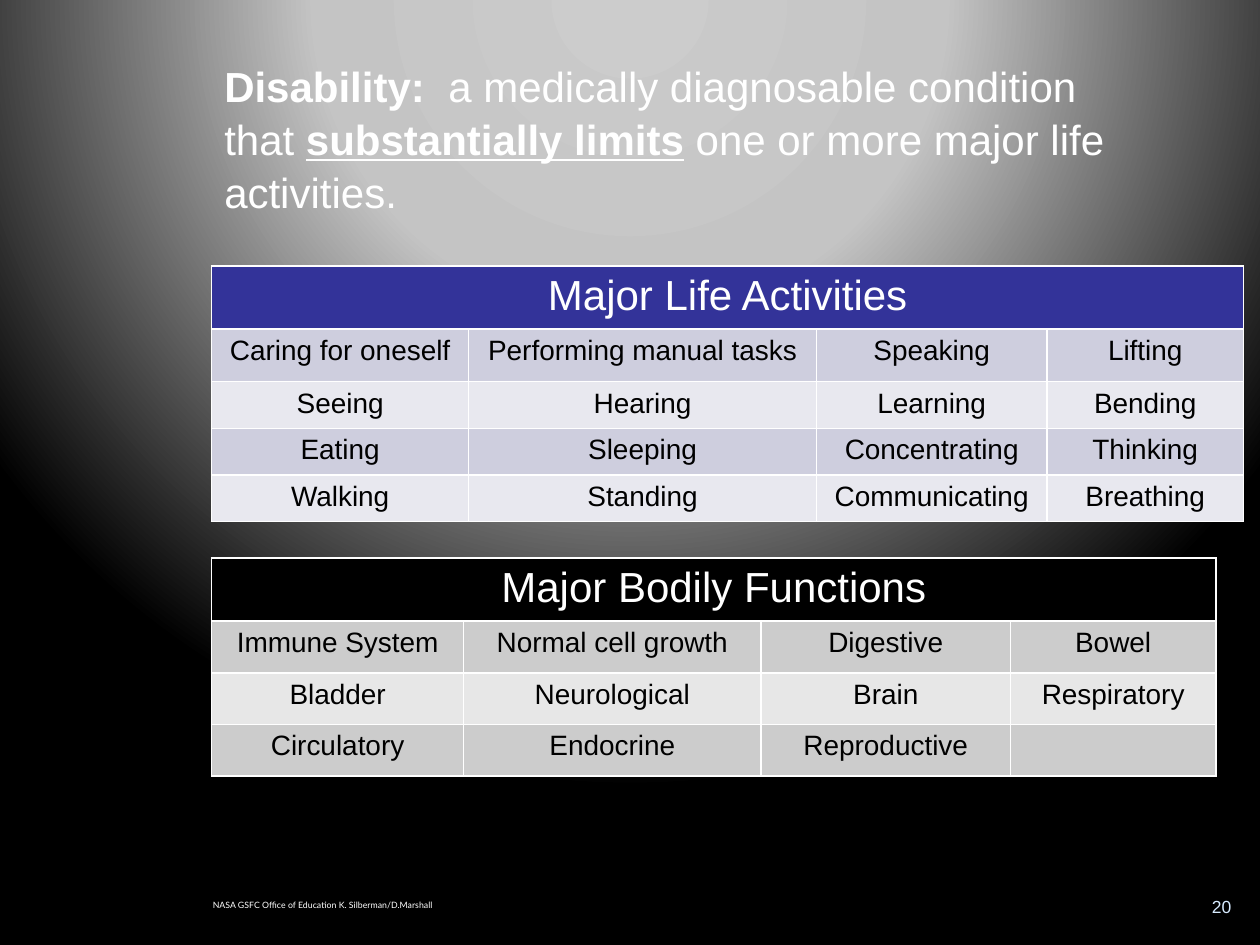
from lxml import etree
from pptx import Presentation
from pptx.dml.color import RGBColor
from pptx.enum.text import MSO_ANCHOR, MSO_AUTO_SIZE, PP_ALIGN
from pptx.oxml import parse_xml
from pptx.oxml.ns import nsdecls, qn
from pptx.util import Inches, Pt

DEFINITION = [
    ("Disability: ", {"bold": True}),
    (" a medically diagnosable condition that ", {}),
    ("substantially limits", {"bold": True, "underline": True}),
    (" one or more major life activities.", {}),
]
TABLES = [
    {
        "heading": "Major Life Activities",
        "top": 2.11,
        "columns": [2.04, 2.76, 1.83, 1.56],
        "heights": [0.5, 0.42, 0.37, 0.37, 0.37],
        "heading_fill": "333399",
        "bands": ["CECEDE", "E8E8EF"],
        "rows": [
            ["Caring for oneself", "Performing manual tasks", "Speaking", "Lifting"],
            ["Seeing", "Hearing", "Learning", "Bending"],
            ["Eating", "Sleeping", "Concentrating", "Thinking"],
            ["Walking", "Standing", "Communicating", "Breathing"],
        ],
    },
    {
        "heading": "Major Bodily Functions",
        "top": 4.43,
        "columns": [2, 2.36, 1.98, 1.63],
        "heights": [0.5, 0.41, 0.41, 0.41],
        "heading_fill": "000000",
        "bands": ["CCCCCC", "E7E7E7"],
        "rows": [
            ["Immune System", "Normal cell growth", "Digestive", "Bowel"],
            ["Bladder", "Neurological", "Brain", "Respiratory"],
            ["Circulatory", "Endocrine", "Reproductive", ""],
        ],
    },
]
GRADIENT = [(0, "CCCCCC"), (40, "C4C4C4"), (100, "000000")]
LEFT = 1.68


def color(value):
    return RGBColor.from_string(value)


def add_text(paragraph, text, size=24, fill="FFFFFF", font="Arial",
             bold=False, underline=False, align=PP_ALIGN.LEFT):
    paragraph.alignment = align
    run = paragraph.add_run()
    run.text = text
    run.font.size = Pt(size)
    run.font.name = font
    run.font.bold = bold
    run.font.underline = underline
    run.font.color.rgb = color(fill)


def set_background(slide):
    stops = "".join(
        f'<a:gs pos="{position * 1000}"><a:srgbClr val="{value}"/></a:gs>'
        for position, value in GRADIENT
    )
    background = parse_xml(
        f'<p:bg {nsdecls("p", "a")}><p:bgPr><a:gradFill rotWithShape="1">'
        f'<a:gsLst>{stops}</a:gsLst><a:path path="circle">'
        '<a:fillToRect l="50000" t="-80000" r="50000" b="180000"/></a:path>'
        '</a:gradFill><a:effectLst/></p:bgPr></p:bg>'
    )
    slide.element.cSld.insert(0, background)


def set_borders(cell):
    properties = cell._tc.get_or_add_tcPr()
    for index, side in enumerate(("lnL", "lnR", "lnT", "lnB")):
        line = etree.Element(qn(f"a:{side}"), w=str(int(Pt(1))))
        fill = etree.SubElement(line, qn("a:solidFill"))
        etree.SubElement(fill, qn("a:srgbClr"), val="FFFFFF")
        properties.insert(index, line)


def format_cell(cell, text, background, **text_format):
    cell.fill.solid()
    cell.fill.fore_color.rgb = color(background)
    set_borders(cell)
    if text:
        add_text(cell.text_frame.paragraphs[0], text,
                 align=PP_ALIGN.CENTER, **text_format)


def add_activity_table(slide, content):
    columns, heights = content["columns"], content["heights"]
    table = slide.shapes.add_table(
        len(heights), len(columns), Inches(LEFT), Inches(content["top"]),
        Inches(sum(columns)), Inches(sum(heights))
    ).table
    for column, width in zip(table.columns, columns):
        column.width = Inches(width)
    for row, height in zip(table.rows, heights):
        row.height = Inches(height)
    table.cell(0, 0).merge(table.cell(0, len(columns) - 1))
    for index in range(len(columns)):
        heading = "" if index else content["heading"]
        format_cell(table.cell(0, index), heading, content["heading_fill"])
    for row_index, row in enumerate(content["rows"]):
        band = content["bands"][row_index % 2]
        for index, text in enumerate(row):
            format_cell(table.cell(row_index + 1, index), text, band,
                        size=16, fill="000000")


def add_label(slide, text, left, top, width, height, **text_format):
    box = slide.shapes.add_textbox(
        Inches(left), Inches(top), Inches(width), Inches(height))
    box.text_frame.word_wrap = True
    add_text(box.text_frame.paragraphs[0], text, **text_format)


def add_definition(slide):
    title = slide.shapes.title
    title.left, title.top = Inches(LEFT), Inches(0.41)
    title.width, title.height = Inches(7.52), Inches(1.31)
    frame = title.text_frame
    frame.word_wrap = True
    frame.auto_size = MSO_AUTO_SIZE.NONE
    frame.vertical_anchor = MSO_ANCHOR.TOP
    paragraph = frame.paragraphs[0]
    paragraph.line_spacing = 1.05
    for text, text_format in DEFINITION:
        add_text(paragraph, text, **text_format)


def main():
    presentation = Presentation()
    presentation.slide_width = Inches(10)
    presentation.slide_height = Inches(7.5)
    slide = presentation.slides.add_slide(presentation.slide_layouts[5])
    set_background(slide)
    add_definition(slide)
    for content in TABLES:
        add_activity_table(slide, content)
    add_label(slide, "20", 7.79, 7.06, 2.08, 0.4,
              size=10, fill="D7EBFF", align=PP_ALIGN.RIGHT)
    add_label(slide, "NASA GSFC Office of Education K. Silberman/D.Marshall",
              1.59, 7.09, 2.09, 0.25, size=5, font="Lato")
    presentation.save("out.pptx")


if __name__ == "__main__":
    main()
